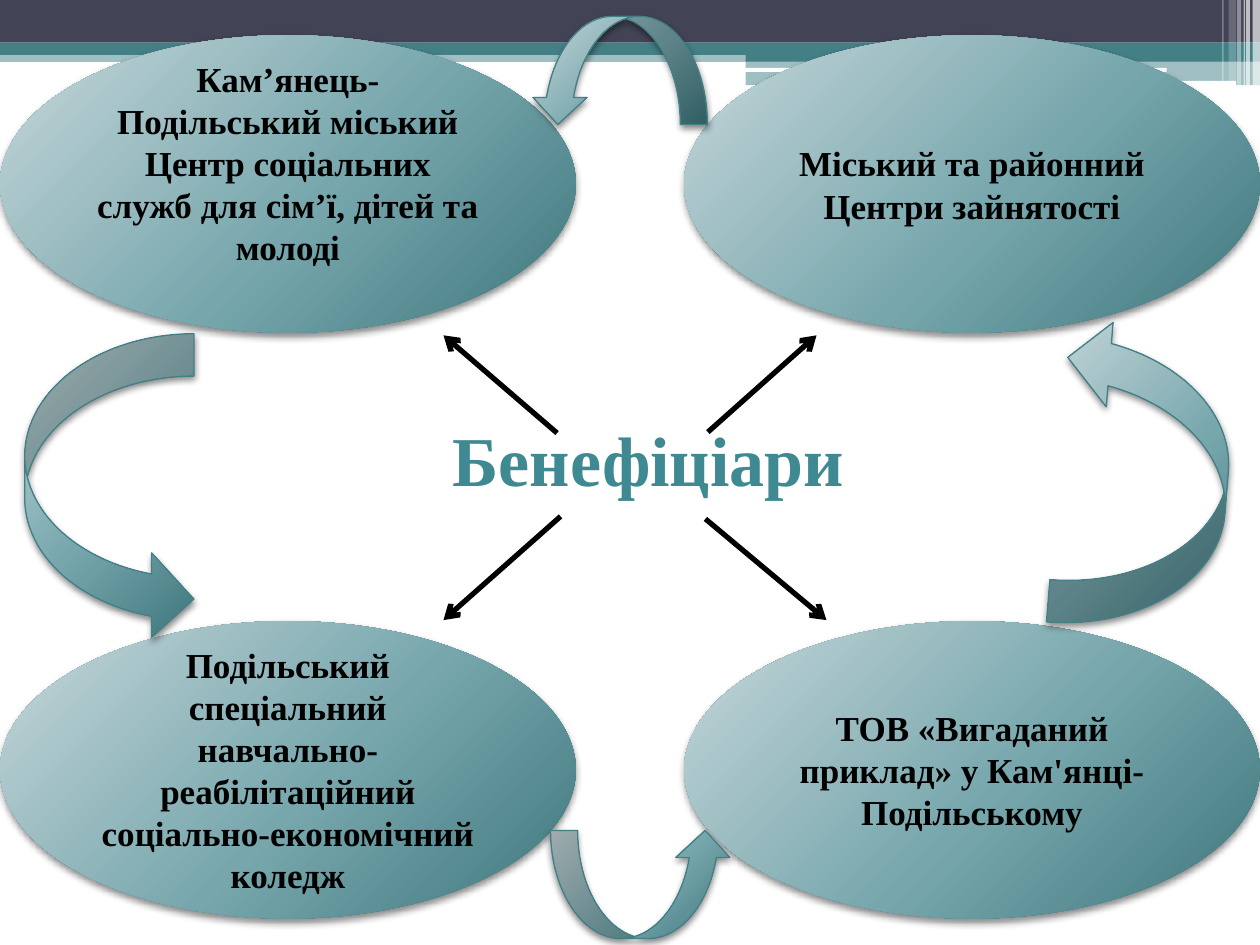
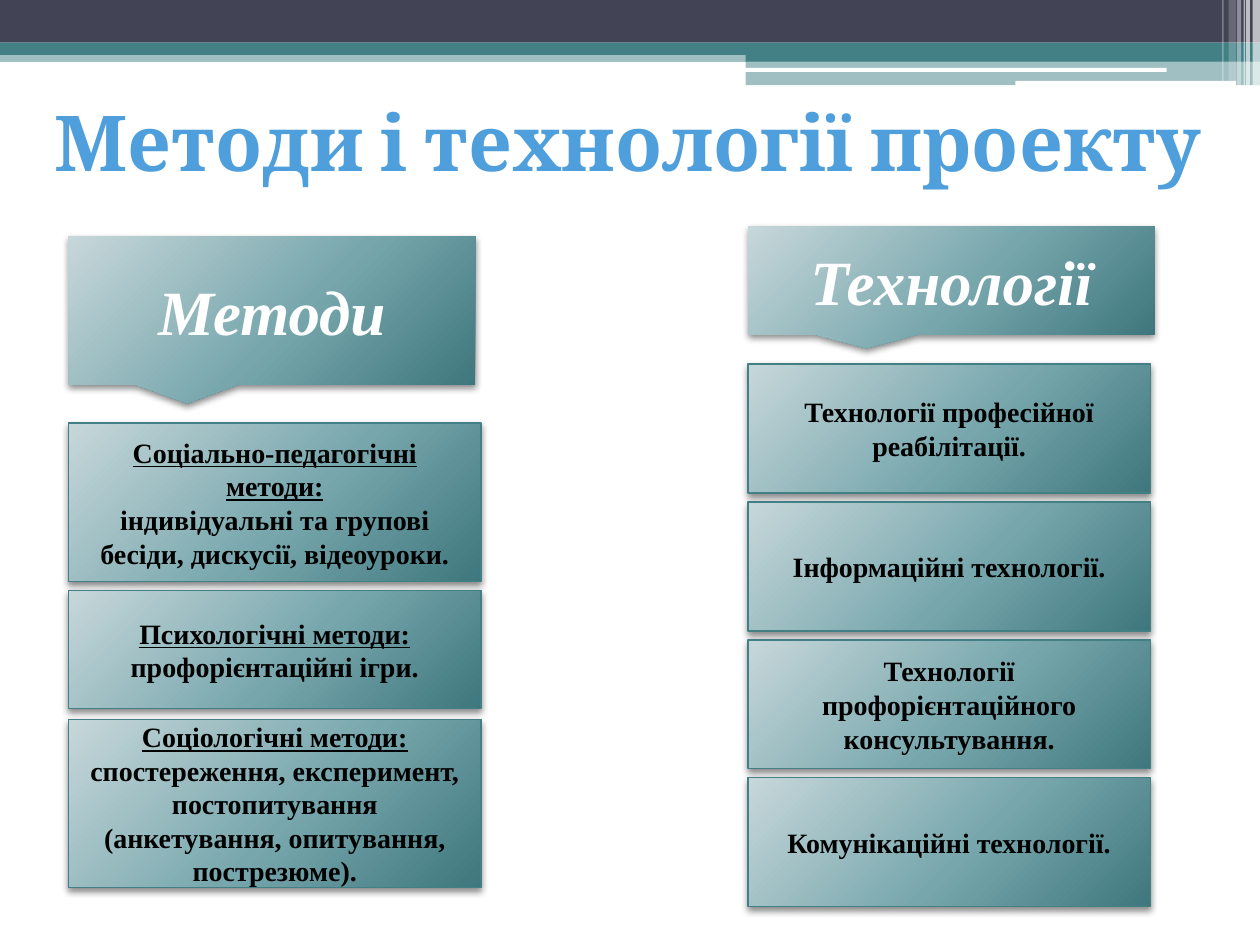
import pptx
import pptx.util
import pptx.oxml
import pptx.oxml.ns
import pptx.dml.color
import pptx.enum.shapes
import pptx.enum.text

Cm = pptx.util.Cm
Pt = pptx.util.Pt
RGB = pptx.dml.color.RGBColor.from_string
qn = pptx.oxml.ns.qn
SHAPE = pptx.enum.shapes.MSO_SHAPE
ANCHOR = pptx.enum.text.MSO_ANCHOR
NSDECL = pptx.oxml.ns.nsdecls("a")

COLORS = {
    "navy": "424456", "teal": "438086", "white": "FFFFFF", "black": "000000",
    "gloss_light": "C7D7DA", "gloss_mid": "77A7AD", "gloss_dark": "3E777D",
    "heading_teal": "3F8992", "heading_blue": "4E9FDB",
}
SERIF = "Times New Roman"

GLOSS = f"""<a:gradFill {NSDECL} rotWithShape="1"><a:gsLst>
<a:gs pos="0"><a:srgbClr val="{COLORS['gloss_light']}"/></a:gs>
<a:gs pos="55000"><a:srgbClr val="{COLORS['gloss_mid']}"/></a:gs>
<a:gs pos="100000"><a:srgbClr val="{COLORS['gloss_dark']}"/></a:gs></a:gsLst>
<a:path path="circle"><a:fillToRect l="-40000" t="-90000" r="140000" b="190000"/></a:path>
</a:gradFill>"""
SOFT_SHADOW = f"""<a:outerShdw {NSDECL} blurRad="50800" dist="25400" dir="5400000" rotWithShape="0">
<a:srgbClr val="{COLORS['black']}"><a:alpha val="45000"/></a:srgbClr></a:outerShdw>"""


def write(frame, runs, size, color, font=SERIF, italic=False):
    """Fill one centred paragraph; each run is (text, underlined)."""
    paragraph = frame.paragraphs[0]
    paragraph.alignment = pptx.enum.text.PP_ALIGN.CENTER
    for text, underlined in runs:
        run = paragraph.add_run()
        run.text = text.rstrip("\n")
        run.font.name = font
        run.font.size = Pt(size)
        run.font.bold = True
        run.font.italic = italic
        run.font.underline = underlined
        run.font.color.rgb = RGB(COLORS[color])
        if text.endswith("\n"):
            paragraph.add_line_break()


def add_glossy(slide, kind, left, top, width, height, outlined=False):
    """Add a shape with the shared gradient and soft shadow."""
    shape = slide.shapes.add_shape(kind, Cm(left), Cm(top), Cm(width), Cm(height))
    shape.fill.gradient()
    properties = shape._element.spPr
    properties.replace(properties.find(qn("a:gradFill")), pptx.oxml.parse_xml(GLOSS))
    if outlined:
        shape.line.color.rgb = RGB(COLORS["teal"])
        shape.line.width = Pt(0.75)
    else:
        shape.line.fill.background()
    shape.shadow.inherit = False
    properties.find(qn("a:effectLst")).append(pptx.oxml.parse_xml(SOFT_SHADOW))
    shape.text_frame.word_wrap = True
    shape.text_frame.vertical_anchor = ANCHOR.MIDDLE
    return shape


deck = pptx.Presentation()
deck.slide_width = Cm(25.4)
deck.slide_height = Cm(19.05)
beneficiaries = deck.slides.add_slide(deck.slide_layouts[6])
methods = deck.slides.add_slide(deck.slide_layouts[6])

# Header bands shared by both slides: kind, left, top, width, height, colour, opacity
header_bands = [
    (SHAPE.RECTANGLE, 0, 1.02, 25.4, 0.23, "teal", 50),
    (SHAPE.RECTANGLE, 0, 0, 25.4, 0.86, "navy", 100),
    (SHAPE.RECTANGLE, 0, 0.86, 25.4, 0.25, "teal", 100),
    (SHAPE.RECTANGLE, 15.03, 0.99, 10.37, 0.25, "teal", 100),
    (SHAPE.RECTANGLE, 15.03, 1.23, 10.37, 0.49, "teal", 50),
    (SHAPE.ROUNDED_RECTANGLE, 15.02, 1.37, 8.5, 0.08, "white", 100),
    (SHAPE.ROUNDED_RECTANGLE, 20.47, 1.63, 4.45, 0.1, "white", 100),
]
for left, width, height, opacity in [
    (25.25, 0.15, 1.73, 65), (25.12, 0.08, 1.73, 65), (25.07, 0.03, 1.73, 60),
    (24.94, 0.08, 1.73, 40), (24.77, 0.15, 1.63, 20), (24.64, 0.03, 1.63, 30),
]:
    header_bands.append((SHAPE.RECTANGLE, left, 0, width, height, "white", opacity))

for slide in (beneficiaries, methods):
    for kind, left, top, width, height, color, opacity in header_bands:
        band = slide.shapes.add_shape(kind, Cm(left), Cm(top), Cm(width), Cm(height))
        band.fill.solid()
        band.fill.fore_color.rgb = RGB(COLORS[color])
        band.line.fill.background()
        band.shadow.inherit = False
        if opacity < 100:
            tint = band._element.spPr.find(qn("a:solidFill"))[0]
            tint.append(pptx.oxml.parse_xml(f'<a:alpha {NSDECL} val="{opacity * 1000}"/>'))

# Headings
for slide, text, left, top, width, height, size, color, font, wrap in [
    (beneficiaries, "Бенефіціари", 7.47, 8.28, 11.2, 1.96, 40, "heading_teal", SERIF, True),
    (methods, "Методи і технології проекту", 0.58, 1.78, 24.16, 2.13, 44,
     "heading_blue", "Cambria", False),
]:
    heading = slide.shapes.add_textbox(Cm(left), Cm(top), Cm(width), Cm(height))
    heading.text_frame.word_wrap = wrap
    write(heading.text_frame, [(text, False)], size, color, font)

# Slide 1: four beneficiaries in the corners
partners = [
    "Кам’янець-Подільський міський Центр соціальних служб для сім’ї, дітей та молоді",
    "Міський та районний Центри зайнятості",
    "Подільський спеціальний навчально-реабілітаційний соціально-економічний коледж",
    "ТОВ «Вигаданий приклад» у Кам'янці-Подільському",
]
for index, partner in enumerate(partners):
    row, column = divmod(index, 2)
    oval = add_glossy(beneficiaries, SHAPE.OVAL, column * 13.79, 0.71 + row * 11.81, 11.61, 6)
    write(oval.text_frame, [(partner, False)], 20, "black")
    if index == 0:
        oval.text_frame.margin_bottom = Cm(0.98)  # lifts the text above the centre

# Curved arrows running around the corners
for left, top, width, height, angle in [
    (0.5, 6.73, 3.41, 6.2, 0), (21.34, 6.48, 3.41, 6.2, 184.6),
    (11.39, -0.36, 2.18, 3.56, 90), (11.84, 16, 2.18, 3.66, 270),
]:
    cycle_arrow = add_glossy(beneficiaries, SHAPE.CURVED_RIGHT_ARROW,
                             left, top, width, height, outlined=True)
    cycle_arrow.rotation = angle

# Straight arrows from the heading to each beneficiary
for start_x, start_y, end_x, end_y in [
    (11.23, 8.73, 8.94, 6.76), (14.27, 8.71, 16.46, 6.76),
    (11.3, 10.41, 8.94, 12.5), (14.22, 10.46, 16.66, 12.5),
]:
    ray = beneficiaries.shapes.add_connector(
        pptx.enum.shapes.MSO_CONNECTOR.STRAIGHT,
        Cm(start_x), Cm(start_y), Cm(end_x), Cm(end_y))
    ray.line.color.rgb = RGB(COLORS["black"])
    ray.line.width = Pt(3)
    ray.line._get_or_add_ln().append(pptx.oxml.parse_xml(f'<a:tailEnd {NSDECL} type="arrow"/>'))
    ray._element.spPr.append(pptx.oxml.parse_xml(f"<a:effectLst {NSDECL}/>"))

# Slide 2: column callouts
methods_left, technologies_left = 1.38, 15.08
for text, left, top, height in [
    ("Методи", methods_left, 4.76, 3), ("Технології", technologies_left, 4.56, 2.19),
]:
    callout = add_glossy(methods, SHAPE.RECTANGULAR_CALLOUT, left, top, 8.2, height)
    write(callout.text_frame, [(text, False)], 36, "white", italic=True)

# Methods column: underlined kind, then its examples
cards = [
    (methods_left, 8.53, 8.32, 3.2,
     [("Соціально-педагогічні методи:\n", True),
      ("індивідуальні та групові бесіди, дискусії, відеоуроки.", False)]),
    (methods_left, 11.91, 8.32, 2.38,
     [("Психологічні методи:\n", True), ("профорієнтаційні ігри.", False)]),
    (methods_left, 14.51, 8.32, 3.38,
     [("Соціологічні методи: ", True),
      ("спостереження, експеримент, постопитування (анкетування, опитування, пострезюме).",
       False)]),
]

# Technologies column: four equal cards
for index, technology in enumerate([
    "Технології професійної реабілітації.",
    "Інформаційні технології.",
    "Технології профорієнтаційного консультування.",
    "Комунікаційні технології.",
]):
    cards.append((technologies_left, 7.34 + index * 2.78, 8.11, 2.6, [(technology, False)]))

for left, top, width, height, runs in cards:
    card = add_glossy(methods, SHAPE.RECTANGLE, left, top, width, height, outlined=True)
    write(card.text_frame, runs, 16, "black")

deck.save("out.pptx")
